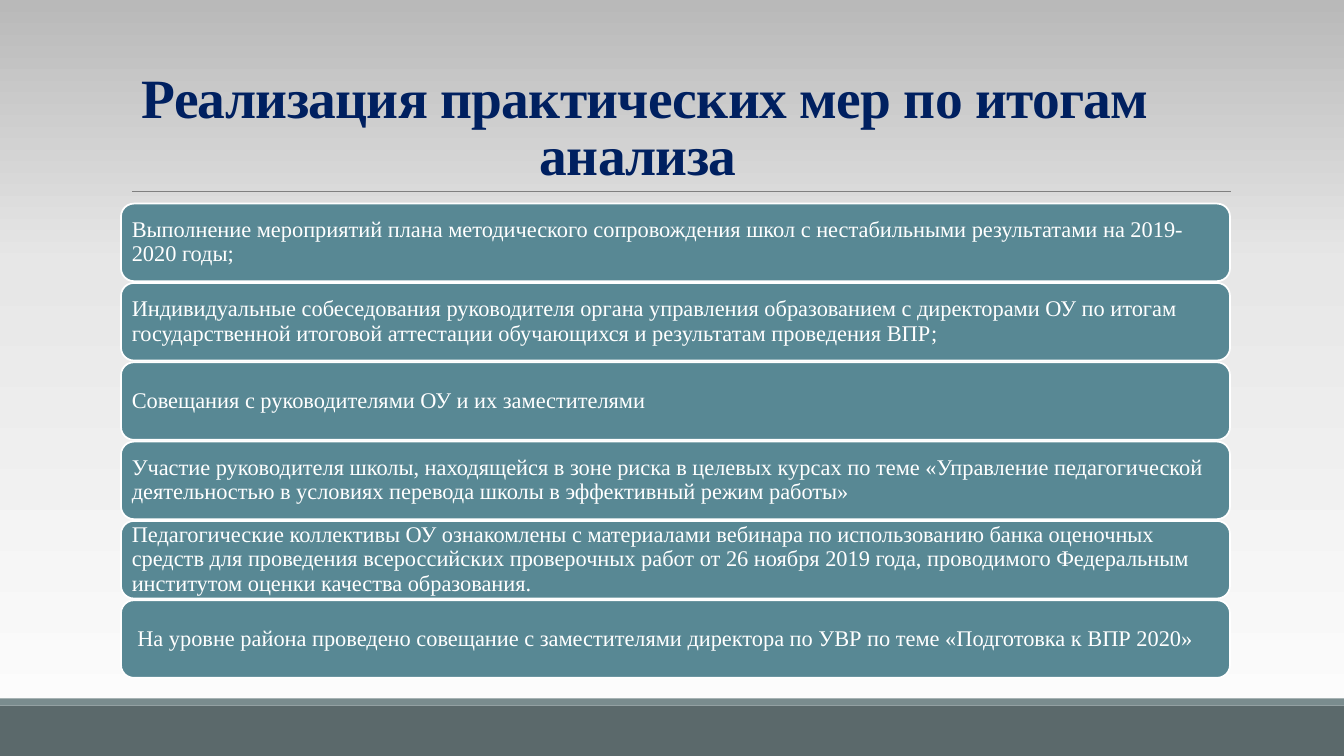
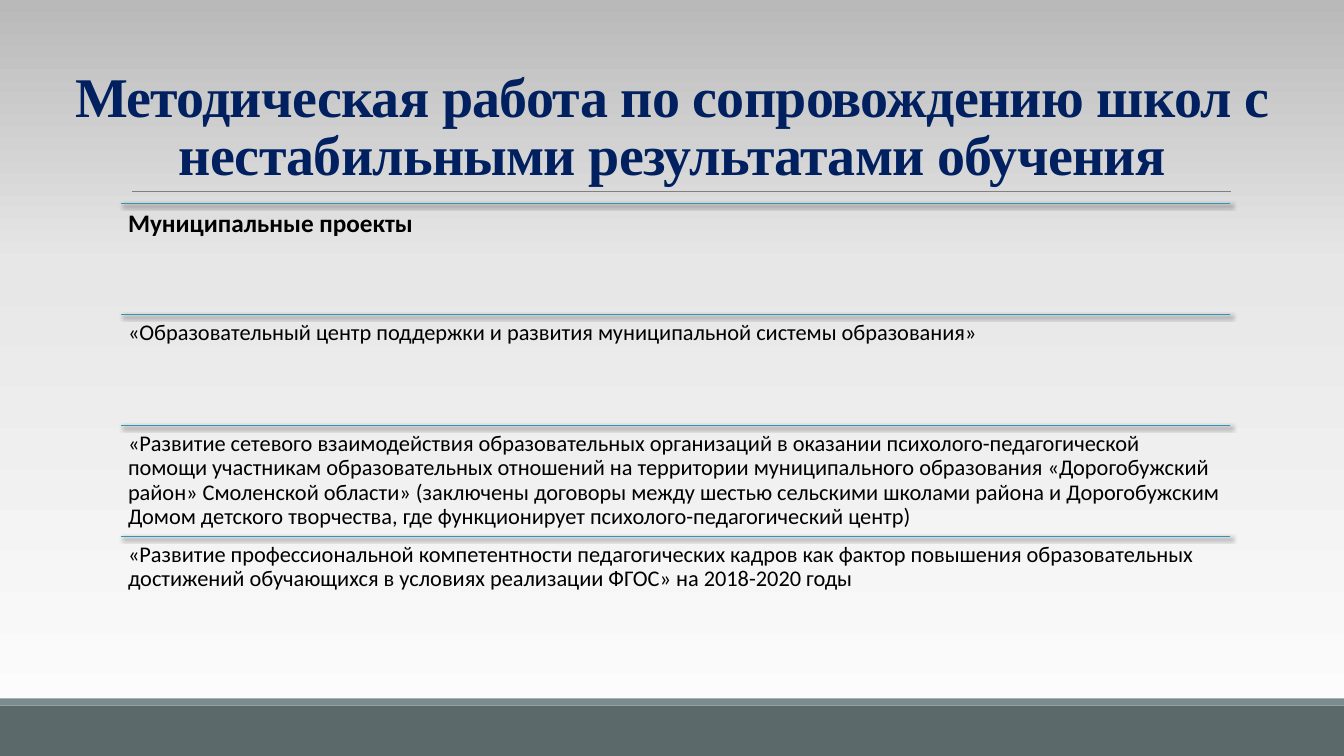
from copy import deepcopy

from lxml import etree
from pptx import Presentation
from pptx.dml.color import RGBColor as RGB
from pptx.enum.shapes import MSO_CONNECTOR as CONN, MSO_SHAPE as SHAPE
from pptx.enum.text import MSO_ANCHOR as ANCHOR, MSO_AUTO_SIZE as FIT, PP_ALIGN as ALIGN
from pptx.oxml.ns import qn
from pptx.util import Inches, Pt

COLORS = {
    "navy": "002060", "card": "588894", "rule": "3494BA", "grey": "808080",
    "footer": "5B696B", "strip": "7A8C8E", "white": "FFFFFF", "black": "000000",
    "bg_low": "FEFEFE", "bg_mid": "E7E7E7", "bg_high": "B9B9B9",
}
SERIF, SANS = "Times New Roman", "Calibri"


def color(name):
    return RGB.from_string(COLORS[name])


def write(tf, text, size=16, font=SANS, fill="black", bold=False, align=ALIGN.LEFT,
          anchor=ANCHOR.TOP, leading=0.9, inset=None, tracking=None):
    """Fill a text frame with one formatted paragraph."""
    tf.word_wrap, tf.auto_size, tf.vertical_anchor = True, FIT.NONE, anchor
    if inset is not None:
        tf.margin_left = tf.margin_right = tf.margin_top = tf.margin_bottom = Inches(inset)
    p = tf.paragraphs[0]
    p.alignment, p.line_spacing = align, leading
    r = p.add_run()
    r.text = text
    r.font.name, r.font.size, r.font.bold = font, Pt(size), bold
    r.font.color.rgb = color(fill)
    if tracking is not None:
        r.font._element.set("spc", str(int(tracking * 100)))


class Deck:
    """Slide style, content grid and the slide being built."""
    W, H = 13.33, 7.5
    LEFT, TOP, WIDTH = 1.2, 2.02, 11
    INSET = 0.07

    def __init__(self):
        self.prs = Presentation()
        self.prs.slide_width, self.prs.slide_height = Inches(self.W), Inches(self.H)
        self.s = None
        self.background()

    def background(self):
        """Three-stop gradient on the master, rising from light to dark."""
        master = self.prs.slide_master
        fill = master.background.fill
        fill.gradient()
        fill.gradient_angle = 90
        stops = next(master.element.iter(qn("a:gsLst")))
        stops.append(deepcopy(stops[-1]))
        steps = ((0, "bg_low"), (0.65, "bg_mid"), (1, "bg_high"))
        for stop, (position, name) in zip(fill.gradient_stops, steps):
            stop.position = position
            stop.color.rgb = color(name)

    def slide(self, title, left=0, width=W, size=40):
        """Start a slide with its footer bands, title rule and title."""
        self.s = self.prs.slides.add_slide(self.prs.slide_layouts[5])
        self.box(SHAPE.RECTANGLE, 0, 7, self.W, 0.5, "footer")
        self.box(SHAPE.RECTANGLE, 0, 6.93, self.W, 0.07, "strip")
        self.rule(1.31, 1.9, 10.9, "grey", 0.5)
        sp = self.s.shapes.title
        sp.left, sp.top, sp.width, sp.height = map(Inches, (left, 0.31, width, 1.59))
        write(sp.text_frame, title, size=size, font=SERIF, fill="navy", bold=True,
              align=ALIGN.CENTER, anchor=ANCHOR.BOTTOM, leading=0.85, tracking=-0.5)

    def box(self, kind, x, y, w, h, fill, outline=None):
        sp = self.s.shapes.add_shape(kind, *map(Inches, (x, y, w, h)))
        sp.shadow.inherit = False
        sp.fill.solid()
        sp.fill.fore_color.rgb = color(fill)
        if outline:
            sp.line.color.rgb = color(outline)
            sp.line.width = Pt(1.25)
        else:
            sp.line.fill.background()
        return sp

    def rule(self, x, y, w, stroke, weight, shadow=False):
        line = self.s.shapes.add_connector(CONN.STRAIGHT, *map(Inches, (x, y, x + w, y)))
        line.line.color.rgb = color(stroke)
        line.line.width = Pt(weight)
        effects = etree.SubElement(line._element.spPr, qn("a:effectLst"))
        if shadow:
            outer = etree.SubElement(effects, qn("a:outerShdw"), blurRad=str(Pt(3)),
                                     dist=str(Pt(2)), dir="2700000", algn="tl")
            tone = etree.SubElement(outer, qn("a:srgbClr"), val=COLORS["black"])
            etree.SubElement(tone, qn("a:alpha"), val="60000")

    def cards(self, texts, pitch=0.787, height=0.77):
        """Stack of rounded cards, one per text."""
        for row, text in enumerate(texts):
            sp = self.box(SHAPE.ROUNDED_RECTANGLE, self.LEFT, self.TOP + row * pitch,
                          self.WIDTH, height, "card", outline="white")
            write(sp.text_frame, text, font=SERIF, fill="white",
                  anchor=ANCHOR.MIDDLE, inset=self.INSET)

    def ruled_rows(self, heading, texts, pitch=1.1):
        """Rows of text under shadowed rules; the first row is a heading."""
        for row, text in enumerate([heading, *texts]):
            y = self.TOP + row * pitch
            self.rule(self.LEFT, y, self.WIDTH, "rule", 1, shadow=True)
            sp = self.s.shapes.add_textbox(*map(Inches, (self.LEFT, y, self.WIDTH, pitch)))
            write(sp.text_frame, text, size=16 if row else 18, bold=row == 0,
                  inset=self.INSET)


MEASURES = [
    "Выполнение мероприятий плана методического сопровождения школ с нестабильными "
    "результатами на 2019-2020 годы;",
    "Индивидуальные собеседования руководителя органа управления образованием с "
    "директорами ОУ по итогам государственной итоговой аттестации обучающихся и "
    "результатам проведения ВПР;",
    "Совещания с руководителями ОУ и их заместителями",
    "Участие руководителя школы, находящейся в зоне риска в целевых курсах по теме "
    "«Управление педагогической деятельностью в условиях перевода школы в эффективный "
    "режим работы»",
    "Педагогические коллективы ОУ ознакомлены с материалами вебинара по использованию "
    "банка оценочных средств для проведения всероссийских проверочных работ от 26 ноября "
    "2019 года, проводимого Федеральным институтом оценки качества образования.",
    " На уровне района проведено совещание с заместителями директора по УВР по теме "
    "«Подготовка к ВПР 2020»",
]
PROJECTS = [
    "«Образовательный центр поддержки и развития муниципальной системы образования»",
    "«Развитие сетевого взаимодействия образовательных организаций в оказании "
    "психолого-педагогической помощи участникам образовательных отношений на территории "
    "муниципального образования «Дорогобужский район» Смоленской области» (заключены "
    "договоры между шестью сельскими школами района и Дорогобужским Домом детского "
    "творчества, где функционирует психолого-педагогический центр)",
    "«Развитие профессиональной компетентности педагогических кадров как фактор повышения "
    "образовательных достижений обучающихся в условиях реализации ФГОС» на 2018-2020 годы",
]


def main():
    deck = Deck()

    # Practical measures
    deck.slide("Реализация практических мер по итогам анализа ",
               left=0.59, width=11.61, size=39.6)
    deck.cards(MEASURES)

    # Municipal projects
    deck.slide("Методическая работа по сопровождению школ с нестабильными "
               "результатами обучения")
    deck.ruled_rows("Муниципальные проекты", PROJECTS)

    deck.prs.save("out.pptx")


if __name__ == "__main__":
    main()
